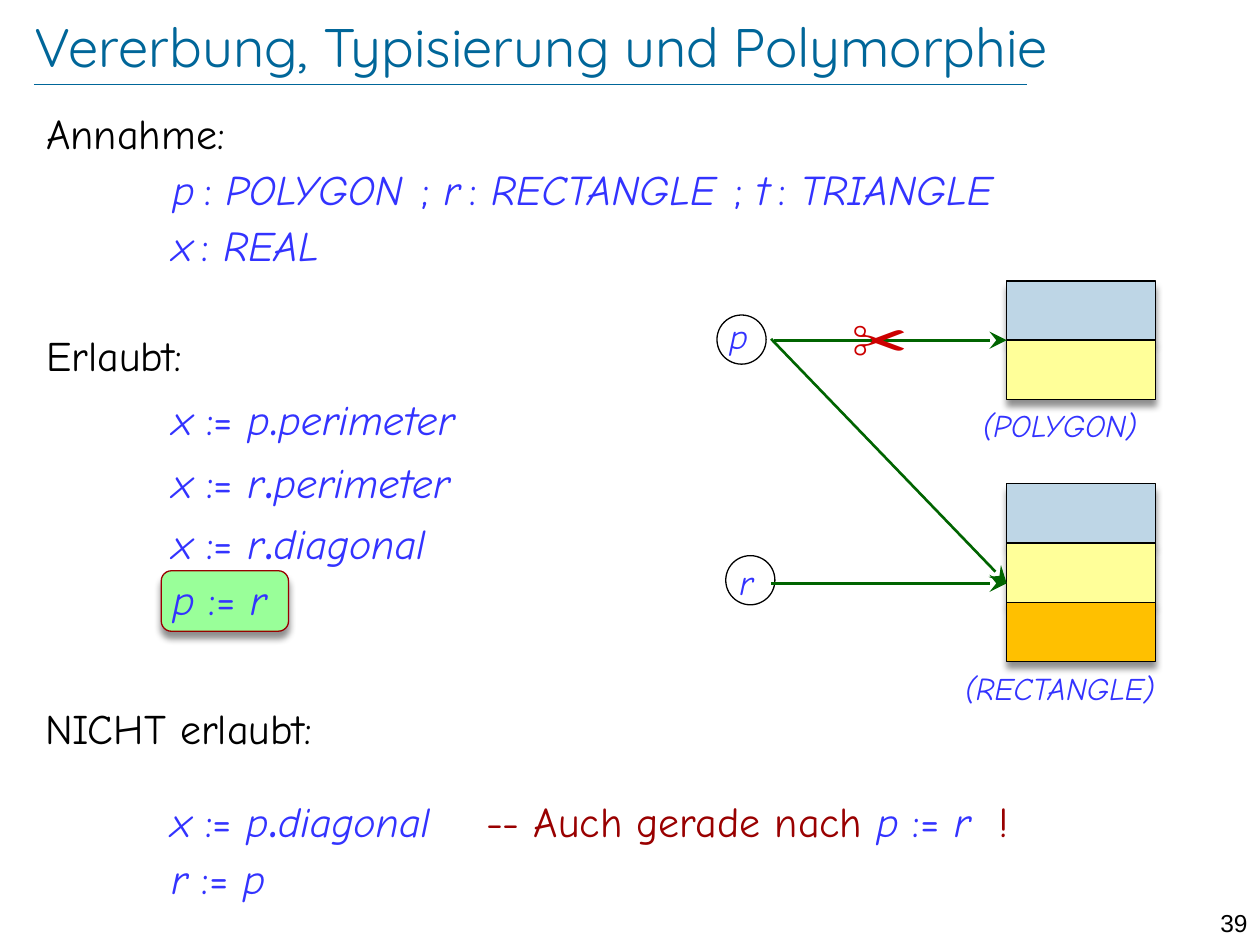
"""Build a slide on inheritance, typing and polymorphism."""
from lxml.etree import SubElement
from pptx import Presentation
from pptx.dml.color import RGBColor
from pptx.enum.shapes import MSO_CONNECTOR, MSO_SHAPE
from pptx.enum.text import MSO_ANCHOR, PP_ALIGN
from pptx.oxml.ns import qn
from pptx.util import Inches, Pt

TEAL = RGBColor(0x00, 0x66, 0x99)
BLACK = RGBColor(0x00, 0x00, 0x00)
BLUE = RGBColor(0x33, 0x33, 0xFF)
DARK_RED = RGBColor(0x99, 0x00, 0x00)
RED = RGBColor(0xCC, 0x00, 0x00)
DARK_GREEN = RGBColor(0x00, 0x64, 0x00)
LIGHT_GREEN = RGBColor(0x99, 0xFF, 0x99)
PALE_BLUE = RGBColor(0xBE, 0xD6, 0xE6)
YELLOW = RGBColor(0xFF, 0xFF, 0x99)
ORANGE = RGBColor(0xFF, 0xC0, 0x00)

HEADING = {"color": BLACK}
CODE = {"color": BLUE}
NAME = {"color": BLUE, "italic": True}
SMALL = {"color": BLUE, "italic": True, "size": 16}
COMMENT = {"color": DARK_RED}
ASSIGN = (" := ", CODE)


def declaration(variable, type_name):
    return [(variable, NAME), (" ", SMALL), (": ", CODE), (type_name, NAME)]


def feature_call(target, feature, dot_size):
    return [("x", NAME), ASSIGN, (target, NAME),
            (".", {"color": BLUE, "size": dot_size}), (feature, NAME)]


SEPARATOR = [("  ", SMALL), ("; ", CODE)]
BODY = [
    ([("Annahme:", HEADING)], {"line": 0.9}),
    (declaration("p", "POLYGON") + SEPARATOR + declaration("r", "RECTANGLE")
     + SEPARATOR + declaration("t", "TRIANGLE"), {"line": 0.9, "before": 6, "indent": 1}),
    (declaration("x", "REAL"), {"line": 0.9, "before": 6, "indent": 1}),
    ([("Erlaubt:", HEADING)], {"line": 0.9, "before": 37}),
    (feature_call("p", "perimeter", 32), {"line": 0.8, "before": 7, "indent": 1}),
    (feature_call("r", "perimeter", 36), {"line": 0.6, "before": 9, "indent": 1}),
    (feature_call("r", "diagonal", 36), {"line": 0.6, "before": 9, "indent": 1}),
    ([("p", NAME), ASSIGN, ("r", NAME)], {"line": 0.9, "before": 6, "indent": 1}),
]
FORBIDDEN = [
    ([("NICHT erlaubt:", HEADING)], {"line": 0.9}),
    (feature_call("p", "diagonal", 36)
     + [("\t", CODE), ("-- Auch gerade nach ", COMMENT), ("p", NAME), ASSIGN,
        ("r  ", NAME), ("!", COMMENT)],
     {"line": 0.9, "before": 17, "indent": 1, "tab": 3.61}),
    ([("r", NAME), ASSIGN, ("p", NAME)], {"line": 0.9, "before": 4, "indent": 1}),
]
OBJECTS = [(2.23, [PALE_BLUE, YELLOW]), (3.84, [PALE_BLUE, YELLOW, ORANGE])]
OBJECT_LEFT, FIELD_WIDTH, FIELD_HEIGHT = 7.99, 1.18, 0.47
CIRCLES = [(5.69, 2.5), (5.76, 4.41)]
ARROWS = [(6.14, 2.7, 2.7), (6.12, 4.63, 4.63), (6.12, 2.69, 4.63)]
LABELS = [
    ("(POLYGON)", (7.7, 3.17, 1.92, 0.4), {"color": BLUE, "italic": True, "size": 18}),
    ("(RECTANGLE)", (7.56, 5.26, 2.13, 0.4), {"color": BLUE, "italic": True, "size": 18}),
    ("p", (5.69, 2.45, 0.55, 0.44), {"color": BLUE, "italic": True, "size": 20}),
    ("r", (5.77, 4.4, 0.55, 0.44), {"color": BLUE, "italic": True, "size": 20}),
    ("✂", (6.66, 2.37, 0.82, 0.64), {"color": RED, "size": 32}),
]


def add_run(paragraph, text, color=BLACK, size=24, font="Comic Neue", italic=False):
    run = paragraph.add_run()
    run.text = text
    run.font.name, run.font.size, run.font.italic = font, Pt(size), italic
    run.font.color.rgb = color


def add_text(slide, box, paragraphs, anchor=MSO_ANCHOR.TOP, insets=(0.1, 0.05)):
    frame = slide.shapes.add_textbox(*map(Inches, box)).text_frame
    frame.word_wrap = True
    frame.vertical_anchor = anchor
    frame.margin_left = frame.margin_right = Inches(insets[0])
    frame.margin_top = frame.margin_bottom = Inches(insets[1])
    for index, (runs, layout) in enumerate(paragraphs):
        paragraph = frame.add_paragraph() if index else frame.paragraphs[0]
        paragraph.alignment = layout.get("align", PP_ALIGN.LEFT)
        paragraph.line_spacing = layout.get("line", 1.0)
        if "before" in layout:
            paragraph.space_before = Pt(layout["before"])
        properties = paragraph._p.get_or_add_pPr()
        properties.set("marL", str(Inches(layout.get("indent", 0))))
        properties.set("indent", "0")
        if "tab" in layout:
            tabs = SubElement(properties, qn("a:tabLst"))
            SubElement(tabs, qn("a:tab"), pos=str(Inches(layout["tab"])), algn="l")
        for text, style in runs:
            add_run(paragraph, text, **style)


def add_box(slide, kind, box, fill=None, line=BLACK):
    shape = slide.shapes.add_shape(kind, *map(Inches, box))
    shape.shadow.inherit = False
    shape.line.color.rgb = line
    shape.line.width = Pt(0.75)
    if fill is None:
        shape.fill.background()
        return
    shape.fill.solid()
    shape.fill.fore_color.rgb = fill
    effects = shape._element.spPr.find(qn("a:effectLst"))
    shadow = SubElement(effects, qn("a:outerShdw"), blurRad=str(Pt(4)), dist=str(Pt(4)),
                        dir="5400000", algn="ctr", rotWithShape="0")
    shade = SubElement(shadow, qn("a:srgbClr"), val="000000")
    SubElement(shade, qn("a:alpha"), val="43000")


def add_line(slide, start, end, color, width, arrow=False):
    line = slide.shapes.add_connector(MSO_CONNECTOR.STRAIGHT, *map(Inches, start + end))
    line.line.color.rgb = color
    line.line.width = Pt(width)
    if arrow:
        SubElement(line.line._get_or_add_ln(), qn("a:tailEnd"),
                   type="stealth", w="lg", len="lg")
    SubElement(line._element.spPr, qn("a:effectLst"))


def main():
    presentation = Presentation()
    presentation.slide_width, presentation.slide_height = Inches(10), Inches(7.5)
    slide = presentation.slides.add_slide(presentation.slide_layouts[6])

    add_line(slide, (0.27, 0.67), (8.15, 0.67), TEAL, 0.25)
    add_text(slide, (9.2, 7.16, 0.8, 0.36),
             [([("39", {"size": 14, "font": "Arial"})], {"align": PP_ALIGN.RIGHT})])
    title = ("Vererbung, Typisierung und Polymorphie",
             {"color": TEAL, "size": 31, "font": "Quicksand"})
    add_text(slide, (0.27, 0.12, 8.69, 0.48), [([title], {})], MSO_ANCHOR.MIDDLE, (0, 0))

    add_box(slide, MSO_SHAPE.ROUNDED_RECTANGLE, (1.28, 4.53, 1.01, 0.48),
            LIGHT_GREEN, DARK_RED)
    for top, fields in OBJECTS:
        for row, fill in enumerate(fields):
            box = (OBJECT_LEFT, top + row * FIELD_HEIGHT, FIELD_WIDTH, FIELD_HEIGHT)
            add_box(slide, MSO_SHAPE.RECTANGLE, box, fill)
    for left, top in CIRCLES:
        add_box(slide, MSO_SHAPE.OVAL, (left, top, 0.39, 0.39))
    for left, start, end in ARROWS:
        add_line(slide, (left, start), (OBJECT_LEFT, end), DARK_GREEN, 1.5, arrow=True)
    for text, box, style in LABELS:
        add_text(slide, box, [([(text, style)], {})])

    add_text(slide, (0.27, 0.85, 9.4, 4.36), BODY)
    add_text(slide, (0.26, 5.57, 8.47, 1.68), FORBIDDEN)
    presentation.save("out.pptx")


if __name__ == "__main__":
    main()
